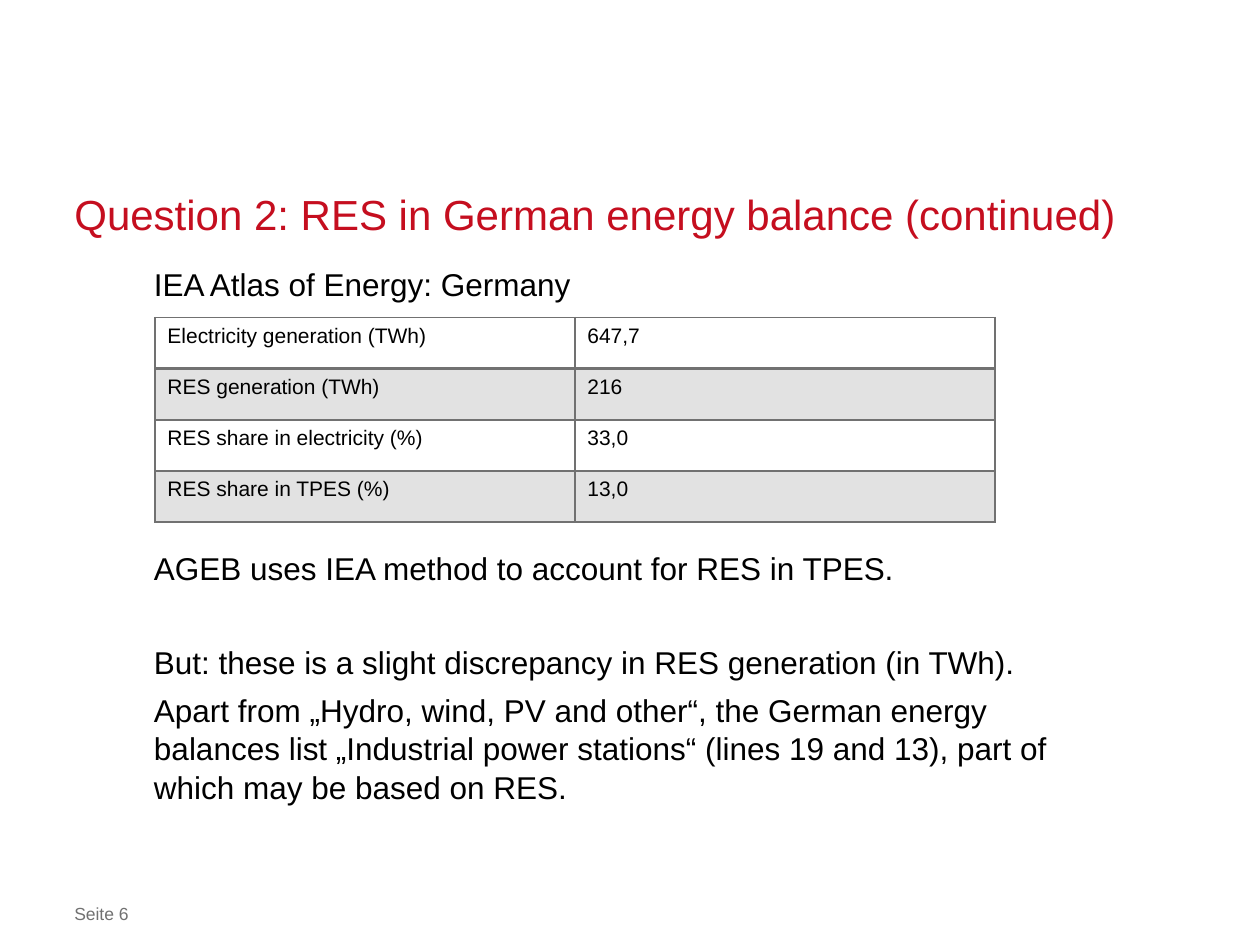
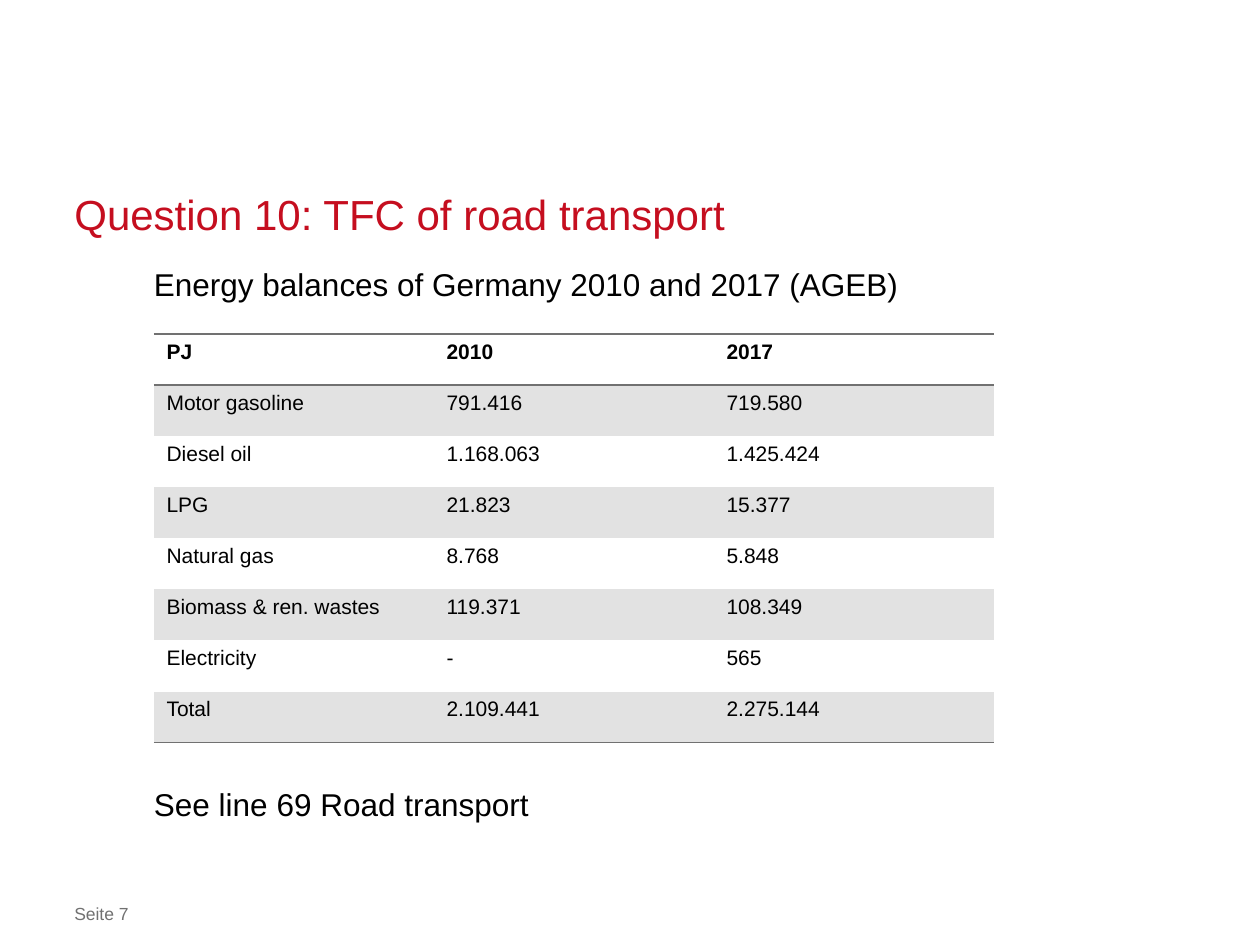
from lxml import etree
from pptx import Presentation, dml
from pptx import util as u
from pptx.dml import color
from pptx.enum import text
from pptx.oxml import ns

Pt = u.Pt
RED, GREY, PALE, BLACK = "C50E1F", "717171", "E2E2E2", "000000"
ROW = 29.2

deck = Presentation()
deck.slide_width, deck.slide_height = Pt(720), Pt(540)


def write(frame, lines, size, hue, pitch=None, bold=False, inset=True):
    frame.word_wrap = True
    if inset:
        for side in ("left", "right", "top", "bottom"):
            setattr(frame, f"margin_{side}", 0)
    for i, (words, gap) in enumerate(lines):
        par = frame.paragraphs[0] if i == 0 else frame.add_paragraph()
        par.text = words
        form = {"alignment": text.PP_ALIGN.LEFT, "space_before": Pt(gap),
                "line_spacing": Pt(pitch) if pitch else None}
        for key, val in form.items():
            setattr(par, key, val)
        face = {"name": "Arial", "size": Pt(size), "bold": bold}
        for key, val in face.items():
            setattr(par.font, key, val)
        par.font.color.rgb = color.RGBColor.from_string(hue)


def edge(cell, side, width):
    props = cell._tc.get_or_add_tcPr()
    line = etree.SubElement(props, ns.qn(f"a:ln{side}"), w=str(Pt(width)))
    if width:
        fill = etree.SubElement(line, ns.qn("a:solidFill"))
        etree.SubElement(fill, ns.qn("a:srgbClr"), val=GREY)
    else:
        etree.SubElement(line, ns.qn("a:noFill"))


pages = [
    {
        "page": 6,
        "title": "Question 2: RES in German energy balance (continued)",
        "body": [
            ("IEA Atlas of Energy: Germany", 0),
            ("AGEB uses IEA method to account for RES in TPES.", 140),
            ("But: these is a slight discrepancy in RES generation (in TWh).", 32),
            ("Apart from „Hydro, wind, PV and other“, the German energy balances list "
             "„Industrial power stations“ (lines 19 and 13), part of which may be "
             "based on RES.", 5),
        ],
        "at": (88.5, 181.5),
        "head": False,
        "rules": [1, 2, 1, 1, 1],
        "bars": 1,
        "rows": [
            ("Electricity generation (TWh)", "647,7"),
            ("RES generation (TWh)", "216"),
            ("RES share in electricity (%)", "33,0"),
            ("RES share in TPES (%)", "13,0"),
        ],
    },
    {
        "page": 7,
        "title": "Question 10: TFC of road transport",
        "body": [
            ("Energy balances of Germany 2010 and 2017 (AGEB)", 0),
            ("See line 69 Road transport", 275),
        ],
        "at": (88, 190.8),
        "head": True,
        "rules": [1, 1] + [0] * 6 + [1],
        "bars": 0,
        "rows": [
            ("PJ", "2010", "2017"),
            ("Motor gasoline", "791.416", "719.580"),
            ("Diesel oil", "1.168.063", "1.425.424"),
            ("LPG", "21.823", "15.377"),
            ("Natural gas", "8.768", "5.848"),
            ("Biomass & ren. wastes", "119.371", "108.349"),
            ("Electricity", "-", "565"),
            ("Total", "2.109.441", "2.275.144"),
        ],
    },
]

for page in pages:
    slide = deck.slides.add_slide(deck.slide_layouts[5])
    title = slide.shapes.title
    place = {"left": 42.5, "top": 108.7, "width": 635, "height": 28}
    for key, val in place.items():
        setattr(title, key, Pt(val))
    title.text_frame.auto_size = text.MSO_AUTO_SIZE.NONE
    title.text_frame.vertical_anchor = text.MSO_ANCHOR.BOTTOM
    write(title.text_frame, [(page["title"], 0)], 24, RED, 30)

    foot = slide.shapes.add_textbox(Pt(42.5), Pt(516.2), Pt(521), Pt(12.2))
    write(foot.text_frame, [(f"Seite {page['page']}", 0)], 10, GREY)

    body = slide.shapes.add_textbox(Pt(88), Pt(151.2), Pt(533), Pt(320))
    write(body.text_frame, page["body"], 18, BLACK, 22)

    rows, rules = page["rows"], page["rules"]
    cols = len(rows[0])
    left, top = page["at"]
    grid = slide.shapes.add_table(len(rows), cols, Pt(left), Pt(top),
                                  Pt(480), Pt(ROW * len(rows))).table
    grid.first_row = page["head"]
    grid.horz_banding = False
    for col in grid.columns:
        col.width = Pt(480 / cols)
    for r, row in enumerate(rows):
        grid.rows[r].height = Pt(ROW)
        for c, words in enumerate(row):
            cell = grid.cell(r, c)
            write(cell.text_frame, [(words, 0)], 12, BLACK,
                  bold=page["head"] and r == 0, inset=False)
            sides = {"L": page["bars"], "R": page["bars"],
                     "T": rules[r], "B": rules[r + 1]}
            for side, width in sides.items():
                edge(cell, side, width)
            if r % 2:
                cell.fill.solid()
                cell.fill.fore_color.rgb = color.RGBColor.from_string(PALE)
            else:
                cell.fill.background()

deck.save("out.pptx")
